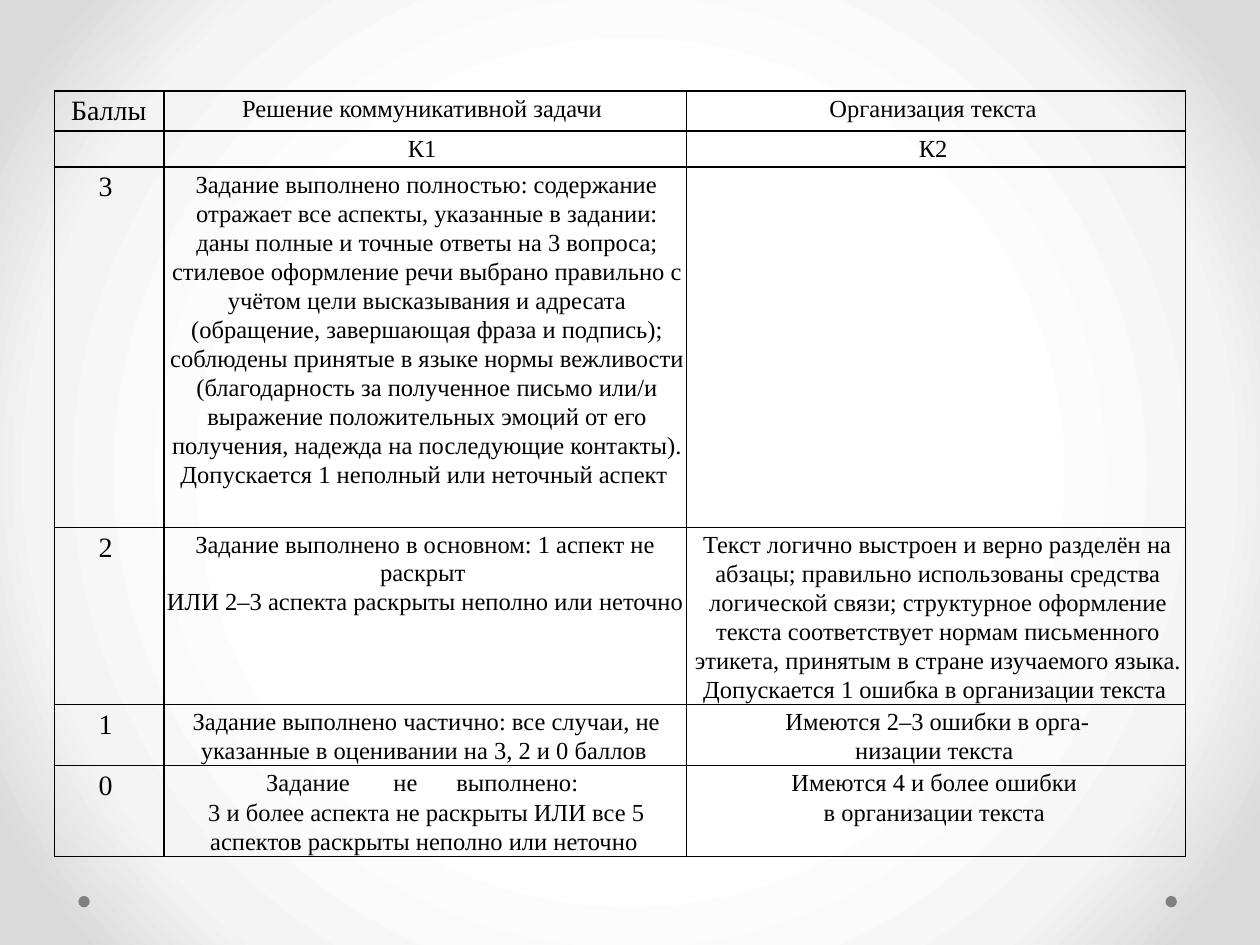
from dataclasses import dataclass

from pptx import Presentation
from pptx import util as u
from pptx.dml.color import RGBColor
from pptx.enum import shapes, text
from pptx.oxml import parse_xml
from pptx.oxml import ns

COLORS = {"ink": "000000", "dot": "808080", "center": "FFFFFF", "mid": "F4F4F4", "edge": "DADADA"}
FONT = "Times New Roman"
COL_WIDTHS = (62.6, 298.8, 285.1)
ROW_HEIGHTS = (23, 20.6, 206, 101, 35, 52)


@dataclass
class Para:
    text: str
    margin: float = 0.72
    spacing: float = 1.07
    after: float = 0.2
    tabs: tuple = ()


@dataclass
class Row:
    score: Para
    k1: tuple = ()
    k2: tuple = ()


ROWS = (
    Row(Para("Баллы ", 4.32), (Para("Решение коммуникативной задачи "),), (Para("Организация текста "),)),
    Row(Para(""), (Para("К1 "),), (Para("К2 "),)),
    Row(Para("3 "), (Para(
        "Задание выполнено полностью: содержание отражает все аспекты, указанные в задании: "
        "даны полные и точные ответы на 3 вопроса; стилевое оформление речи выбрано правильно "
        "с учётом цели высказывания и адресата (обращение, завершающая фраза и подпись); "
        "соблюдены принятые в языке нормы вежливости (благодарность за полученное письмо или/и "
        "выражение положительных эмоций от его получения, надежда на последующие контакты). "
        "Допускается 1 неполный или неточный аспект ", 2.16),)),
    Row(Para("2 "),
        (Para("Задание выполнено в основном: 1 аспект не раскрыт ", spacing=1.04, after=0.1),
         Para("ИЛИ 2–3 аспекта раскрыты неполно или неточно ")),
        (Para("Текст логично выстроен и верно разделён на абзацы; правильно использованы средства "
              "логической связи; структурное оформление текста соответствует нормам письменного "
              "этикета, принятым в стране изучаемого языка. Допускается 1 ошибка в организации "
              "текста ", 2.16),)),
    Row(Para("1 "),
        (Para("Задание выполнено частично: все случаи, не указанные в оценивании на 3, 2 и 0 баллов ", 2.16),),
        (Para("Имеются 2–3 ошибки в орга-", 2.16), Para("низации текста ", 2.16))),
    Row(Para("0 "),
        (Para("Задание \tне \tвыполнено: ", tabs=((59, "ctr"), (135.4, "r"))),
         Para("3 и более аспекта не раскрыты ИЛИ все 5 аспектов раскрыты неполно или неточно ", 2.16)),
        (Para("Имеются 4 и более ошибки ", 2.16), Para("в организации текста ", 2.16))),
)


def set_background(s) -> None:
    """Give the slide its radial gradient."""
    stops = "".join(
        f'<a:gs pos="{pos * 1000}"><a:srgbClr val="{COLORS[name]}"/></a:gs>'
        for pos, name in ((50, "center"), (76, "mid"), (92, "edge")))
    s.element.cSld.insert(0, parse_xml(
        f'<p:bg {ns.nsdecls("p", "a")}><p:bgPr><a:gradFill rotWithShape="1"><a:gsLst>{stops}</a:gsLst>'
        '<a:path path="circle"><a:fillToRect l="50000" t="50000" r="50000" b="50000"/></a:path>'
        '</a:gradFill><a:effectLst/></p:bgPr></p:bg>'))


def add_dot(s, left: float) -> None:
    """Draw one grey dot in the footer."""
    sp = s.shapes.add_shape(shapes.MSO_SHAPE.OVAL, u.Pt(left), u.Pt(512), u.Pt(6.5), u.Pt(6.5))
    sp.shadow.inherit = False
    sp.fill.solid()
    sp.fill.fore_color.rgb = RGBColor.from_string(COLORS["dot"])
    sp.line.fill.background()


def add_borders(cell) -> None:
    """Put a thin line on all four sides of a cell."""
    props = cell._tc.get_or_add_tcPr()
    for i, side in enumerate(("lnL", "lnR", "lnT", "lnB")):
        props.insert(i, parse_xml(
            f'<a:{side} {ns.nsdecls("a")} w="{u.Pt(1)}"><a:solidFill>'
            f'<a:srgbClr val="{COLORS["ink"]}"/></a:solidFill></a:{side}>'))


def write_para(p, para: Para, *, size: float) -> None:
    """Fill a centred paragraph with formatted text."""
    p.alignment = text.PP_ALIGN.CENTER
    p.line_spacing = para.spacing
    p.space_after = u.Pt(para.after)
    p.font.size = u.Pt(size)
    props = p._p.get_or_add_pPr()
    props.set("marL", str(u.Pt(para.margin)))
    props.set("indent", str(u.Pt(-0.72)))
    if para.tabs:
        stops = "".join(f'<a:tab pos="{u.Pt(pos)}" algn="{align}"/>' for pos, align in para.tabs)
        props.insert_element_before(
            parse_xml(f'<a:tabLst {ns.nsdecls("a")}>{stops}</a:tabLst>'), "a:defRPr", "a:extLst")
    if not para.text:
        p._p.append(parse_xml(f'<a:endParaRPr {ns.nsdecls("a")} sz="{size * 100}"/>'))
        return
    r = p.add_run()
    r.text = para.text
    r.font.size = u.Pt(size)
    r.font.name = FONT
    r.font.color.rgb = RGBColor.from_string(COLORS["ink"])


def fill_cell(cell, paras: tuple, *, size: float) -> None:
    """Format a cell and write its paragraphs."""
    cell.fill.background()
    cell.margin_left = cell.margin_right = u.Pt(0.72)
    cell.margin_top, cell.margin_bottom = u.Pt(1.44), u.Pt(0)
    add_borders(cell)
    tf = cell.text_frame
    for i, para in enumerate(paras or (Para(""),)):
        write_para(tf.add_paragraph() if i else tf.paragraphs[0], para, size=size)


def add_score_table(s) -> None:
    """Draw the table of scoring criteria."""
    frame = s.shapes.add_table(len(ROWS), len(COL_WIDTHS), u.Pt(31), u.Pt(52),
                               u.Pt(sum(COL_WIDTHS)), u.Pt(sum(ROW_HEIGHTS)))
    table = frame.table
    table.first_row = table.horz_banding = False
    for column, width in zip(table.columns, COL_WIDTHS):
        column.width = u.Pt(width)
    for i, (row, height) in enumerate(zip(ROWS, ROW_HEIGHTS)):
        table.rows[i].height = u.Pt(height)
        fill_cell(table.cell(i, 0), (row.score,), size=16 if row.score.text else 14)
        fill_cell(table.cell(i, 1), row.k1, size=14)
        fill_cell(table.cell(i, 2), row.k2, size=14)


def main() -> None:
    """Build and save the slide."""
    prs = Presentation()
    prs.slide_width, prs.slide_height = u.Pt(720), u.Pt(540)
    s = prs.slides.add_slide(prs.slide_layouts[6])
    set_background(s)
    for left in (666, 44.8):
        add_dot(s, left)
    add_score_table(s)
    prs.save("out.pptx")


if __name__ == "__main__":
    main()
